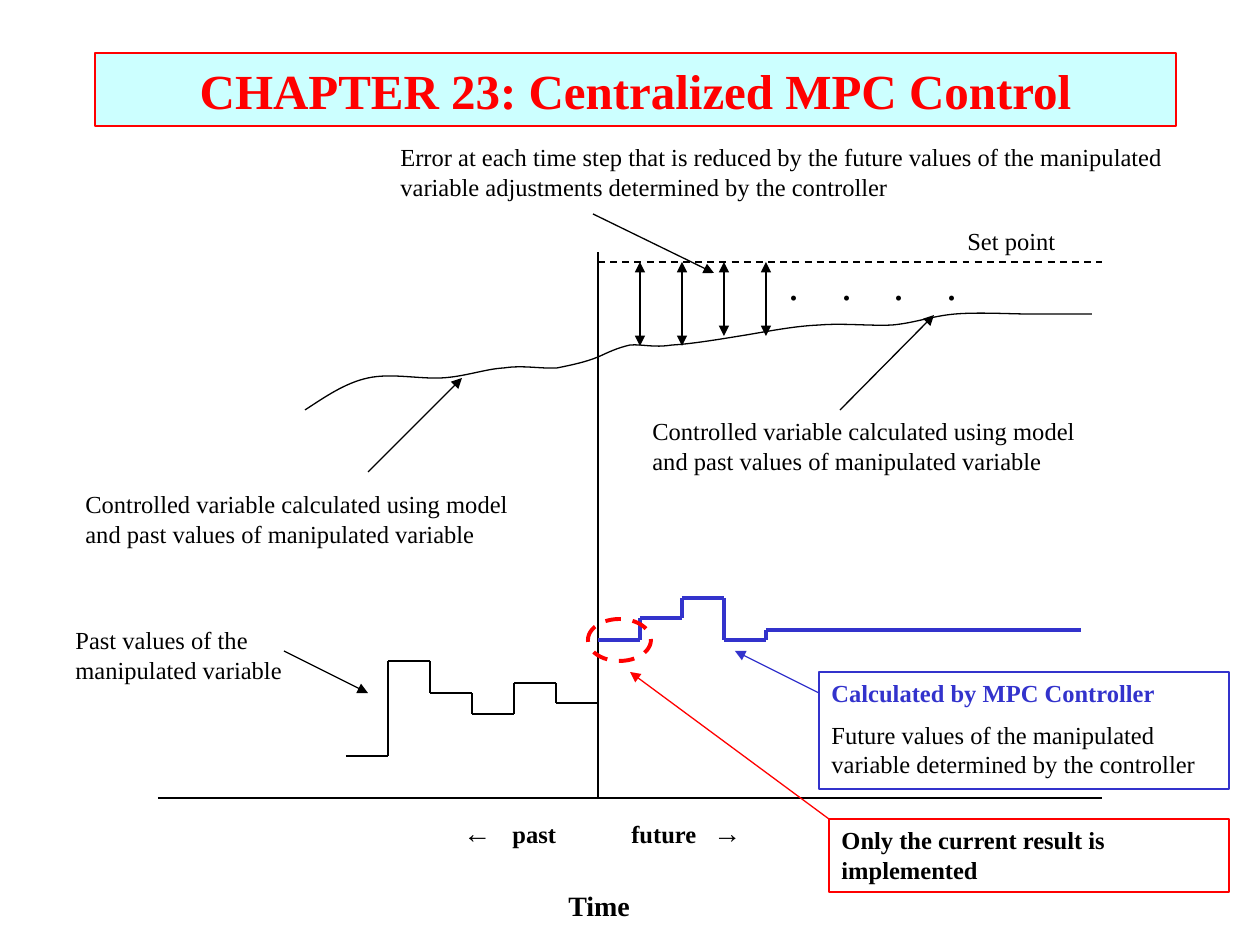
from itertools import pairwise
from lxml.etree import SubElement
from pptx import Presentation
from pptx.dml.color import RGBColor
from pptx.enum.dml import MSO_LINE
from pptx.enum.shapes import MSO_CONNECTOR, MSO_SHAPE
from pptx.enum.text import MSO_ANCHOR, MSO_AUTO_SIZE, PP_ALIGN
from pptx.oxml.ns import qn
from pptx.util import Emu, Pt

COLORS = {"black": "000000", "red": "FF0000", "blue": "3333CC", "cyan": "CCFFFF"}
FONT = "Times New Roman"
NOW, STEP = 598, 42
AXIS_TOP, AXIS_BOTTOM, SET_POINT = 252, 798, 262

TITLE = "CHAPTER 23: Centralized MPC Control"
MODEL_NOTE = ("Controlled variable calculated using model "
              "and past values of manipulated variable")

PAST_MOVES = [756, 661, 693, 714, 683, 703]
FUTURE_MOVES = [640, 618, 598, 640, 630]
FUTURE_END = 1081
ERROR_BOTTOMS = [346, 346, 336, 336]

PAST_CURVE = [
    (305, 410), (325, 397), (345, 383), (368, 378), (391, 373), (418, 379),
    (441, 378), (464, 377), (485, 369), (504, 368), (523, 365), (541, 369),
    (557, 368), (572, 365), (586, 362), (598, 357)]
FUTURE_CURVE = [
    (598, 357), (609, 352), (617, 348), (630, 345), (643, 344), (653, 348),
    (672, 345), (692, 344), (721, 339), (746, 335), (770, 331), (795, 326),
    (819, 325), (843, 323), (869, 326), (892, 325), (915, 323), (932, 316),
    (955, 314), (978, 312), (1012, 314), (1029, 314), (1047, 314), (1050, 314),
    (1061, 314), (1071, 314), (1081, 314), (1092, 314)]

POINTERS = [
    ((593, 214), (714, 273), "black"),
    ((368, 472), (462, 378), "black"),
    ((840, 410), (934, 315), "black"),
    ((284, 651), (368, 693), "black"),
    ((819, 693), (735, 651), "blue"),
    ((829, 819), (630, 672), "red"),
]

# box, runs as (text, size, bold), tab stops
LABELS = [
    ((388, 136, 829, 72), [("Error at each time step that is reduced by the future values of "
                            "the manipulated variable adjustments determined by the controller",
                            14, False)], []),
    ((640, 410, 451, 72), [(MODEL_NOTE, 14, False)], []),
    ((73, 483, 451, 72), [(MODEL_NOTE, 14, False)], []),
    ((63, 619, 284, 72), [("Past values of the manipulated variable", 14, False)], []),
    ((756, 252, 251, 63), [("\t.\t.\t.\t.", 24, False)], [20, 73, 125, 178]),
    ((451, 809, 136, 47), [("←", 16, True), ("\tpast", 14, True)], [49]),
    ((619, 809, 242, 47), [("future", 14, True), ("\t→", 16, True)], [82]),
    ((556, 882, 126, 47), [("Time", 16, True)], []),
]
SET_POINT_LABEL = ((955, 220, 113, 42), [("Set point", 14, False)])

# box, border colour, paragraphs as (text, colour, bold)
CALLOUTS = [
    ((819, 672, 410, 117), "blue", [
        ("Calculated by MPC Controller", "blue", True),
        ("Future values of the manipulated variable determined by the controller",
         "black", False)]),
    ((829, 819, 400, 73), "red", [("Only the current result is implemented", "black", True)]),
]


def px(length):
    return Emu(round(length * 914400 / 126))


def rgb(name):
    return RGBColor.from_string(COLORS[name])


def style_line(line, color, width=0.75, dash=None):
    line.color.rgb = rgb(color)
    line.width = Pt(width)
    if dash:
        line.dash_style = dash


def add_line(start, end, color="black", width=0.75, dash=None, arrows=()):
    connector = slide.shapes.add_connector(
        MSO_CONNECTOR.STRAIGHT, *map(px, (*start, *end)))
    style_line(connector.line, color, width, dash)
    properties = connector._element.spPr
    for end_name in arrows:
        SubElement(properties.find(qn("a:ln")), qn(f"a:{end_name}"), type="triangle")
    SubElement(properties, qn("a:effectLst"))


def add_steps(levels, end, color, width):
    edges = [end[0] + STEP * i for i in range(len(levels))] + [end[1]]
    for (left, right), level in zip(pairwise(edges), levels):
        add_line((left, level), (right, level), color, width)
    for edge, (before, after) in zip(edges[1:], pairwise(levels)):
        add_line((edge, before), (edge, after), color, width)


def add_curve(points):
    builder = slide.shapes.build_freeform(*map(px, points[0]))
    builder.add_line_segments([(px(x), px(y)) for x, y in points[1:]], close=False)
    curve = builder.convert_to_shape()
    curve.fill.background()
    style_line(curve.line, "black")
    curve.shadow.inherit = False
    path = next(curve._element.iter(qn("a:path")))
    segments = path.findall(qn("a:lnTo"))
    for i in range(0, len(segments), 3):
        bezier = SubElement(path, qn("a:cubicBezTo"))
        for segment in segments[i:i + 3]:
            bezier.append(segment[0])
            path.remove(segment)


def format_run(run, size, bold, color="black"):
    run.font.name = FONT
    run.font.size = Pt(size)
    run.font.bold = bold
    run.font.color.rgb = rgb(color)


def add_label(box, runs, tabs=(), wrap=True):
    frame = slide.shapes.add_textbox(*map(px, box)).text_frame
    frame.word_wrap = wrap
    frame.auto_size = MSO_AUTO_SIZE.SHAPE_TO_FIT_TEXT
    paragraph = frame.paragraphs[0]
    for text, size, bold in runs:
        run = paragraph.add_run()
        run.text = text
        format_run(run, size, bold)
    if tabs:
        tab_list = SubElement(paragraph._p.get_or_add_pPr(), qn("a:tabLst"))
        for position in tabs:
            SubElement(tab_list, qn("a:tab"), pos=str(px(position)), algn="l")


def add_outline(kind, box, color, width=0.75, dash=None):
    shape = slide.shapes.add_shape(kind, *map(px, box))
    shape.shadow.inherit = False
    shape.fill.background()
    style_line(shape.line, color, width, dash)
    return shape


def add_callout(box, border, paragraphs):
    frame = add_outline(MSO_SHAPE.RECTANGLE, box, border).text_frame
    frame.word_wrap = True
    frame.auto_size = MSO_AUTO_SIZE.SHAPE_TO_FIT_TEXT
    frame.vertical_anchor = MSO_ANCHOR.TOP
    frame.text = "\n".join(text for text, _, _ in paragraphs)
    for paragraph, (_, color, bold) in zip(frame.paragraphs, paragraphs):
        paragraph.alignment = PP_ALIGN.LEFT
        paragraph.space_before = Pt(7)
        format_run(paragraph.runs[0], 14, bold, color)


presentation = Presentation()
presentation.slide_width, presentation.slide_height = px(1260), px(945)
slide = presentation.slides.add_slide(presentation.slide_layouts[5])

title = slide.shapes.title
title.left, title.top, title.width, title.height = map(px, (95, 53, 1081, 73))
title.fill.solid()
title.fill.fore_color.rgb = rgb("cyan")
style_line(title.line, "red")
title.text_frame.text = TITLE
title.text_frame.vertical_anchor = MSO_ANCHOR.MIDDLE
title.text_frame.auto_size = MSO_AUTO_SIZE.NONE
title.text_frame.paragraphs[0].alignment = PP_ALIGN.CENTER
format_run(title.text_frame.paragraphs[0].runs[0], 28, True, "red")

add_line((158, AXIS_BOTTOM), (1102, AXIS_BOTTOM))
add_line((NOW, AXIS_BOTTOM), (NOW, AXIS_TOP))
add_line((NOW, SET_POINT), (1102, SET_POINT), width=1, dash=MSO_LINE.DASH)
add_steps(PAST_MOVES, (NOW - STEP * len(PAST_MOVES), NOW), "black", 0.75)
add_steps(FUTURE_MOVES, (NOW, FUTURE_END), "blue", 2.25)
add_curve(PAST_CURVE)
add_curve(FUTURE_CURVE)
for i, bottom in enumerate(ERROR_BOTTOMS, 1):
    add_line((NOW + STEP * i, bottom), (NOW + STEP * i, SET_POINT),
             arrows=("headEnd", "tailEnd"))

for label in LABELS:
    add_label(*label)
add_label(*SET_POINT_LABEL, wrap=False)
for callout in CALLOUTS:
    add_callout(*callout)
add_outline(MSO_SHAPE.OVAL, (588, 619, 63, 42), "red", 2.25, MSO_LINE.DASH)
for start, end, color in POINTERS:
    add_line(start, end, color, arrows=("tailEnd",))

presentation.save("out.pptx")
